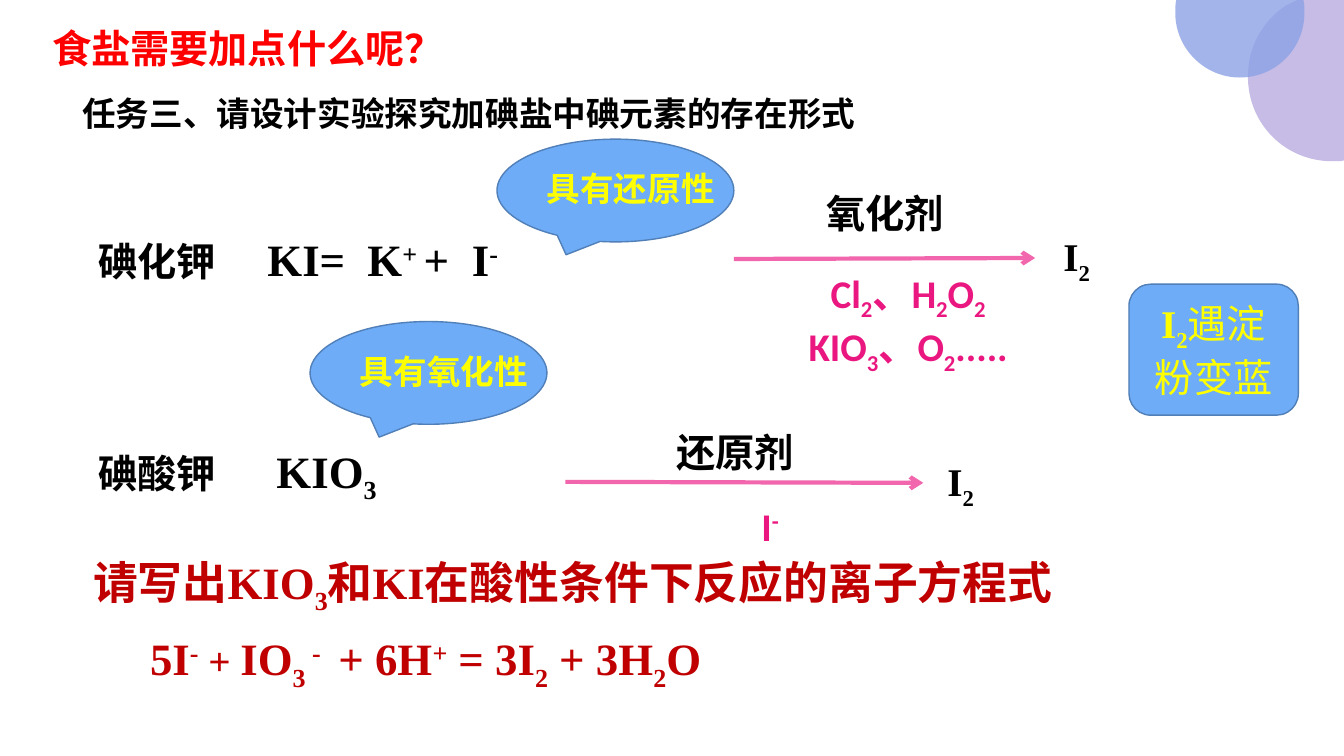
from dataclasses import dataclass
from typing import Optional, Union

from lxml.etree import SubElement
from pptx import Presentation
from pptx.dml.color import RGBColor
from pptx.enum.shapes import MSO_CONNECTOR, MSO_SHAPE
from pptx.enum.text import MSO_ANCHOR, MSO_AUTO_SIZE, PP_ALIGN
from pptx.oxml.ns import qn
from pptx.shapes.autoshape import Shape
from pptx.shapes.shapetree import GroupShapes, SlideShapes
from pptx.text.text import TextFrame
from pptx.util import Pt

Shapes = Union[SlideShapes, GroupShapes]
Point = tuple[float, float]

COLORS = {
    "purple": "A595D7", "periwinkle": "8CA2E6", "black": "000000",
    "red": "FF0000", "dark_red": "C00000", "yellow": "FFFF00",
    "magenta": "EA1781", "pink": "F166AC", "blue": "6EACF7", "outline": "517FB7",
}
SERIF = "Times New Roman"
EAST_ASIAN_FONT = "Noto Sans CJK SC"
# Run markers: "_" subscript, "^" superscript, "~" secondary style
BASELINES = {"_": "-25000", "^": "30000"}


@dataclass(frozen=True)
class Style:
    size: float
    color: str
    font: str = SERIF
    centered: bool = False
    minor_size: Optional[float] = None
    minor_bold: bool = True
    line_gap: float = 0
    indent: float = 0


@dataclass(frozen=True)
class Label:
    left: float
    top: float
    width: float
    height: float
    lines: tuple[str, ...]
    style: Style
    tabs: tuple[tuple[float, ...], ...] = ()
    wrap: bool = True


@dataclass(frozen=True)
class Disc:
    color: str
    opacity: int
    corners: tuple[Point, ...]
    curve_points: tuple[Point, ...]


@dataclass(frozen=True)
class Callout:
    left: float
    top: float
    text: str


@dataclass(frozen=True)
class Arrow:
    start: Point
    end: Point


FORMULA = Style(32, "black", minor_size=28, line_gap=113.1)
PRODUCT = Style(28, "black")
CONDITION = Style(28, "black", centered=True)
REAGENT = Style(28, "magenta", "Calibri", centered=True)
QUESTION = Style(32, "dark_red", indent=8)
EQUATION = Style(32, "dark_red", minor_size=28)
CALLOUT = Style(24, "yellow", EAST_ASIAN_FONT)
STARCH = Style(28, "yellow", centered=True, minor_bold=False)

# Each curve takes two control points and an end point
DISCS = (
    Disc("purple", 63, ((926.6, 0), (960, 0), (960, 114.6), (957.6, 115.2)),
         ((955.9, 115.2), (953.9, 115.2), (951.8, 115.2),
          (918, 115.2), (891.4, 88.6), (891.4, 54.7),
          (891.4, 33.8), (901.4, 15.8), (918, 4.3))),
    Disc("periwinkle", 80, ((840.2, 0), (931, 0)),
         ((931.7, 2.9), (931.7, 5.8), (931.7, 9.4),
          (931.7, 34.6), (911.5, 55.4), (885.6, 55.4),
          (860.4, 55.4), (839.5, 34.6), (839.5, 9.4),
          (839.5, 5.8), (839.5, 2.9), (840.2, 0))),
)
CALLOUTS = (
    Callout(355, 99.4, "具有还原性"),
    Callout(221.5, 229.7, "具有氧化性"),
)
ARROWS = (
    Arrow((524.2, 185), (739.4, 184.3)),
    Arrow((403.9, 344.2), (659.5, 344.9)),
)
HEADINGS = (
    Label(51.8, 63, 700.6, 36, ("任务三、请设计实验探究加碘盐中碘元素的存在形式",),
          Style(24, "black", "Arial")),
    Label(30.2, 13.7, 288, 41, ("食盐需要加点什么呢？",), Style(28, "red", "Arial")),
    Label(63.4, 162, 555.8, 239.8,
          ("~碘化钾|\tKI=|\tK|^+ |+|\tI|^-", "~碘酸钾|\tKIO|_3"), FORMULA,
          ((120.5, 192, 266.5), (127,))),
)
REACTION_LABELS = (
    Label(752.4, 162.3, 42.5, 41, ("I|_2",), PRODUCT),
    Label(524.4, 131.8, 215.3, 41, ("氧化剂",), CONDITION),
    Label(669.6, 323.3, 42.5, 41, ("I|_2",), PRODUCT),
    Label(410.4, 302.4, 229.7, 41, ("还原剂",), CONDITION),
    Label(518.4, 188.6, 260.6, 142.6,
          ("Cl|_2|、H|_2|O|_2", "KIO|_3|、O|_2|....."), REAGENT),
    Label(419.8, 355.4, 260.6, 74.9, ("I|^-",), REAGENT),
)
QUESTION_LABELS = (
    Label(51.4, 392.4, 774, 71.3,
          ("请写出KIO|_3|和KI在酸性条件下反应的离子方程式",), QUESTION),
    Label(100.1, 447.3, 412.6, 46,
          ("5I|^-|~ + |IO|_3 |^- | + 6H|^+| = 3I|_2| + 3H|_2|O",), EQUATION, wrap=False),
)


def rgb(name: str) -> RGBColor:
    return RGBColor.from_string(COLORS[name])


def write_text(frame: TextFrame, lines: tuple[str, ...], style: Style,
               tabs: tuple[tuple[float, ...], ...] = ()) -> None:
    for index, line in enumerate(lines):
        paragraph = frame.add_paragraph() if index else frame.paragraphs[0]
        paragraph.alignment = PP_ALIGN.CENTER if style.centered else PP_ALIGN.LEFT
        if index and style.line_gap:
            paragraph.space_before = Pt(style.line_gap)
        paragraph.font.name = style.font
        paragraph.font.size = Pt(style.size)
        paragraph.font.bold = True
        paragraph.font.color.rgb = rgb(style.color)
        properties = paragraph._p.get_or_add_pPr()
        if style.indent:
            properties.set("indent", str(int(Pt(style.indent))))
        defaults = properties.find(qn("a:defRPr"))
        SubElement(defaults, qn("a:ea"), typeface=EAST_ASIAN_FONT)
        if tabs:
            tab_list = SubElement(properties, qn("a:tabLst"))
            defaults.addprevious(tab_list)
            for position in tabs[index]:
                SubElement(tab_list, qn("a:tab"), pos=str(int(Pt(position))), algn="l")
        for piece in line.split("|"):
            marker = piece[0] if piece[0] in "_^~" else ""
            run = paragraph.add_run()
            run.text = piece[len(marker):]
            if marker in BASELINES:
                run._r.get_or_add_rPr().set("baseline", BASELINES[marker])
            elif marker:
                run.font.size = Pt(style.minor_size or style.size)
                run.font.bold = style.minor_bold


def add_label(shapes: Shapes, label: Label) -> None:
    box = shapes.add_textbox(Pt(label.left), Pt(label.top),
                             Pt(label.width), Pt(label.height))
    box.text_frame.word_wrap = label.wrap
    box.text_frame.auto_size = MSO_AUTO_SIZE.SHAPE_TO_FIT_TEXT
    write_text(box.text_frame, label.lines, label.style, label.tabs)


def add_disc(shapes: Shapes, disc: Disc) -> None:
    points = [(Pt(x), Pt(y)) for x, y in disc.corners + disc.curve_points]
    builder = shapes.build_freeform(*points[0])
    builder.add_line_segments(points[1:], close=True)
    shape = builder.convert_to_shape()
    shape.shadow.inherit = False
    shape.fill.solid()
    shape.fill.fore_color.rgb = rgb(disc.color)
    shape.line.fill.background()
    properties = shape._element.spPr
    SubElement(properties.find(qn("a:solidFill"))[0], qn("a:alpha"),
               val=str(disc.opacity * 1000))
    # Turn the segments after the corners into curves, three points each
    segments = list(properties.iter(qn("a:lnTo")))[len(disc.corners) - 1:]
    for start in range(0, len(segments), 3):
        outline = segments[start].getparent()
        curve = SubElement(outline, qn("a:cubicBezTo"))
        segments[start].addprevious(curve)
        for segment in segments[start:start + 3]:
            curve.append(segment[0])
            outline.remove(segment)


def add_blue_shape(shapes: Shapes, kind: MSO_SHAPE, left: float, top: float,
                   width: float, height: float) -> Shape:
    shape = shapes.add_shape(kind, Pt(left), Pt(top), Pt(width), Pt(height))
    shape.shadow.inherit = False
    shape.fill.solid()
    shape.fill.fore_color.rgb = rgb("blue")
    shape.line.color.rgb = rgb("outline")
    shape.line.width = Pt(1)
    return shape


def add_callout(shapes: Shapes, callout: Callout) -> None:
    group = shapes.add_group_shape()
    add_blue_shape(group.shapes, MSO_SHAPE.OVAL_CALLOUT,
                   callout.left, callout.top, 169.2, 73.4)
    add_label(group.shapes, Label(callout.left + 28.5, callout.top + 17.3, 141, 36,
                                  (callout.text,), CALLOUT))


def add_arrow(shapes: Shapes, arrow: Arrow) -> None:
    connector = shapes.add_connector(
        MSO_CONNECTOR.STRAIGHT, *map(Pt, arrow.start), *map(Pt, arrow.end))
    connector.line.color.rgb = rgb("pink")
    connector.line.width = Pt(3)
    SubElement(connector.line._get_or_add_ln(), qn("a:tailEnd"), type="arrow")
    SubElement(connector._element.spPr, qn("a:effectLst"))


def main() -> None:
    presentation = Presentation()
    presentation.slide_width, presentation.slide_height = Pt(960), Pt(540)
    shapes = presentation.slides.add_slide(presentation.slide_layouts[6]).shapes

    # Corner decoration
    decoration = shapes.add_group_shape()
    for disc in DISCS:
        add_disc(decoration.shapes, disc)
    # Headings, formulas and reactions
    for label in HEADINGS:
        add_label(shapes, label)
    for callout in CALLOUTS:
        add_callout(shapes, callout)
    for arrow in ARROWS:
        add_arrow(shapes, arrow)
    for label in REACTION_LABELS:
        add_label(shapes, label)
    # Starch test
    starch = add_blue_shape(shapes, MSO_SHAPE.ROUNDED_RECTANGLE, 806.4, 203, 121, 93.6)
    starch.text_frame.word_wrap = True
    starch.text_frame.vertical_anchor = MSO_ANCHOR.MIDDLE
    write_text(starch.text_frame, ("I|_2|~遇淀粉变蓝",), STARCH)
    # Question and ionic equation
    for label in QUESTION_LABELS:
        add_label(shapes, label)

    presentation.save("out.pptx")


if __name__ == "__main__":
    main()
